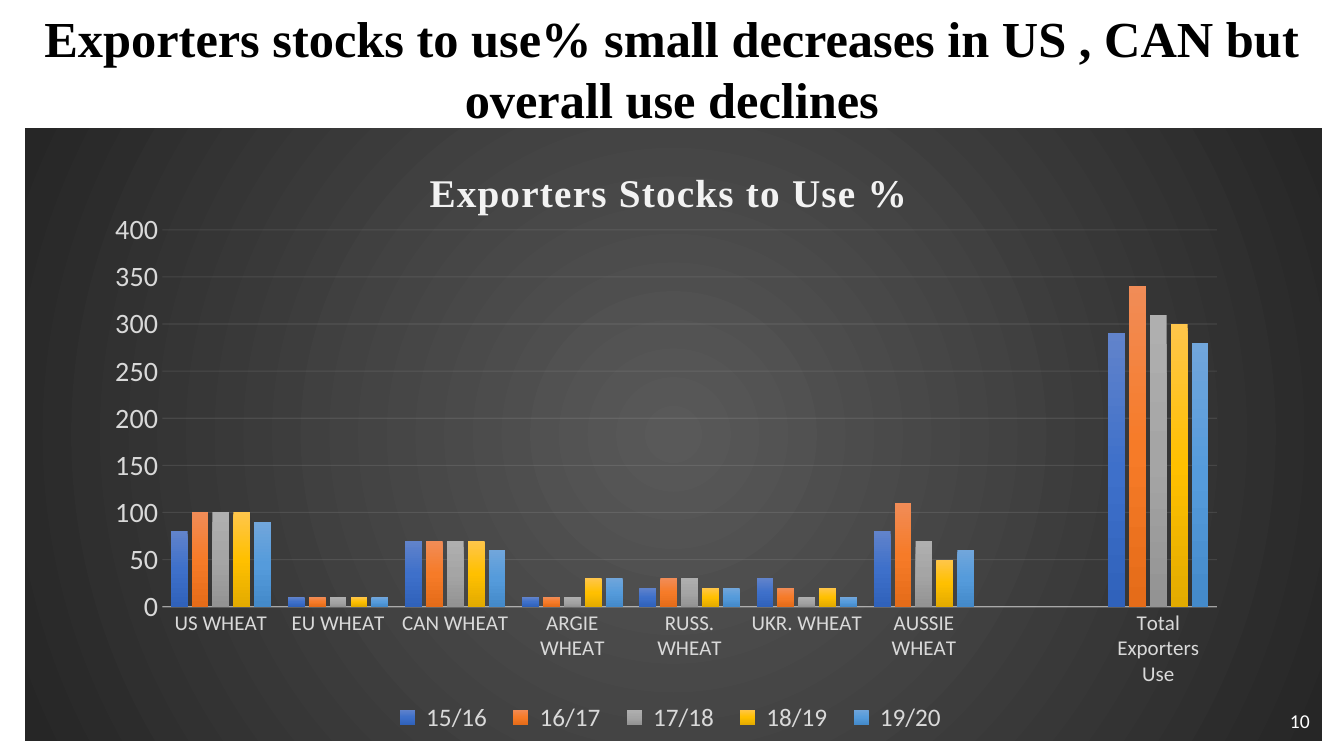
from lxml import etree
from pptx import Presentation
from pptx.chart.data import CategoryChartData
from pptx.dml.color import RGBColor
from pptx.enum.chart import XL_CHART_TYPE, XL_LEGEND_POSITION, XL_TICK_MARK
from pptx.enum.text import MSO_ANCHOR, PP_ALIGN
from pptx.oxml import parse_xml
from pptx.oxml.ns import qn
from pptx.util import Inches, Pt

COLUMN = XL_CHART_TYPE.COLUMN_CLUSTERED
BOTTOM = XL_LEGEND_POSITION.BOTTOM
NO_TICK = XL_TICK_MARK.NONE
MIDDLE = MSO_ANCHOR.MIDDLE
CENTER, RIGHT = PP_ALIGN.CENTER, PP_ALIGN.RIGHT

BLACK = RGBColor(0x00, 0x00, 0x00)
WHITE = RGBColor(0xFF, 0xFF, 0xFF)
PALE = RGBColor(0xF2, 0xF2, 0xF2)
LIGHT = RGBColor(0xD9, 0xD9, 0xD9)
GRAY = RGBColor(0x59, 0x59, 0x59)
DARK = RGBColor(0x26, 0x26, 0x26)
SANS, SERIF = "Calibri", "Times New Roman"
NS = ('xmlns:a="http://schemas.openxmlformats.org/drawingml/2006/main" '
      'xmlns:c="http://schemas.openxmlformats.org/drawingml/2006/chart"')
LINEAR = '<a:lin ang="5400000" scaled="0"/>'
CIRCLE = ('<a:path path="circle"><a:fillToRect l="50000" t="50000" '
          'r="50000" b="50000"/></a:path>')

GROUPS = ["US WHEAT", "EU WHEAT", "CAN WHEAT", "ARGIE WHEAT", "RUSS. WHEAT",
          "UKR. WHEAT", "AUSSIE WHEAT", "", "Total Exporters Use"]
YEARS = [
    (" 15/16", [80, 10, 70, 10, 20, 30, 80, None, 290], "6183CB 3E70CA 3062BB"),
    (" 16/17", [100, 10, 70, 10, 30, 20, 110, None, 340], "F18C57 F67B28 E56C19"),
    (" 17/18", [100, 10, 70, 10, 30, 10, 70, None, 310], "AFAFAF A5A5A5 939393"),
    (" 18/19", [100, 10, 70, 30, 20, 20, 50, None, 300], "FFC64B FFC000 E3AB00"),
    (" 19/20", [90, 10, 60, 30, 20, 10, 60, None, 280], "71A6DB 559BDB 448ACA"),
]


def style(font, size, color, face=SANS, bold=False):
    font.size, font.name, font.bold = Pt(size), face, bold
    font.color.rgb = color


def add_text(slide, text, box, size, color, face=SANS, bold=False,
             align=CENTER, anchor=MIDDLE):
    frame = slide.shapes.add_textbox(*map(Inches, box)).text_frame
    frame.word_wrap = True
    frame.vertical_anchor = anchor
    para = frame.paragraphs[0]
    para.alignment = align
    run = para.add_run()
    run.text = text
    style(run.font, size, color, face, bold)


def blend(colors, shade):
    step = 100000 // (len(colors) - 1)
    stops = "".join(f'<a:gs pos="{i * step}"><a:srgbClr val="{color}"/></a:gs>'
                    for i, color in enumerate(colors))
    return (f'<a:gradFill {NS} rotWithShape="1"><a:gsLst>{stops}</a:gsLst>'
            f'{shade}</a:gradFill>')


def set_layout(parent, box, spot, after=None, inner=False):
    wide, high = box[2:]
    marks = [("layoutTarget", "inner")] if inner else []
    marks += [("xMode", "edge"), ("yMode", "edge")]
    marks += [(tag, size / full) for tag, size, full
              in zip("xywh", spot, (wide, high, wide, high))]
    body = "".join(f'<c:{tag} val="{val}"/>' for tag, val in marks)
    place = parse_xml(f'<c:layout {NS}><c:manualLayout>{body}'
                      f'</c:manualLayout></c:layout>')
    for old in parent.findall(qn("c:layout")):
        parent.remove(old)
    if after is None:
        parent.insert(0, place)
    else:
        parent.find(qn(after)).addnext(place)


def set_line(line, width, alpha):
    line.color.rgb = PALE
    line.width = Pt(width)
    color = next(line._ln.iter(qn("a:srgbClr")))
    etree.SubElement(color, qn("a:alpha"), val=str(alpha * 1000))


def add_title(chart, box):
    chart.has_title = True
    title = chart.chart_title
    title.include_in_layout = False
    run = title.text_frame.paragraphs[0].add_run()
    run.text = "Exporters Stocks to Use %"
    style(run.font, 28, PALE, SERIF, True)
    run.font._element.set("spc", "100")
    set_layout(title._element, box, (3.94, 0.33), after="c:tx")


def add_legend(chart, box):
    chart.has_legend = True
    legend = chart.legend
    legend.position = BOTTOM
    legend.include_in_layout = False
    style(legend.font, 18, LIGHT)
    set_layout(legend._element, box, (3.54, 5.68, 5.72, 0.36),
               after="c:legendPos")


def set_axes(chart):
    for axis, size in ((chart.category_axis, 15), (chart.value_axis, 20)):
        axis.major_tick_mark = axis.minor_tick_mark = NO_TICK
        style(axis.tick_labels.font, size, LIGHT)
    set_line(chart.category_axis.format.line, 1, 54)
    scale = chart.value_axis
    scale.minimum_scale, scale.maximum_scale, scale.major_unit = 0, 400, 50
    scale.format.line.fill.background()
    scale.tick_labels.number_format = "0"
    scale.tick_labels.number_format_is_linked = False
    set_line(scale.major_gridlines.format.line, 0.75, 10)


def add_bars(slide, box):
    data = CategoryChartData(number_format="0")
    data.categories = GROUPS
    for name, vals, _ in YEARS:
        data.add_series(name, vals)
    chart = slide.shapes.add_chart(COLUMN, *map(Inches, box), data).chart
    style(chart.font, 10, BLACK)
    add_title(chart, box)
    set_axes(chart)
    add_legend(chart, box)
    plot = chart.plots[0]
    plot.gap_width, plot.overlap = 100, -24
    plot.vary_by_categories = False
    for bars, (_, _, tones) in zip(plot.series, YEARS):
        bars.format.fill.solid()
        fill = bars._element.spPr.find(qn("a:solidFill"))
        fill.getparent().replace(fill, parse_xml(blend(tones.split(), LINEAR)))
    root = chart._chartSpace
    set_layout(root.chart.plotArea, box, (1.36, 1.01, 10.46, 3.74), inner=True)
    back = blend([GRAY, DARK], CIRCLE)
    root.chart.addnext(parse_xml(
        f'<c:spPr {NS}>{back}<a:ln><a:noFill/></a:ln></c:spPr>'))


def build():
    deck = Presentation()
    deck.slide_width, deck.slide_height = Inches(13.33), Inches(7.5)
    slide = deck.slides.add_slide(deck.slide_layouts[6])
    add_bars(slide, (0.25, 1.27, 12.86, 6.08))
    add_text(slide, "10", (10.09, 6.95, 3, 0.4), 14, WHITE, align=RIGHT)
    add_text(slide, "Exporters stocks to use% small decreases in US , CAN but "
             "overall use declines", (0, 0.02, 13.33, 1.31), 36, BLACK,
             face=SERIF, bold=True)
    deck.save("out.pptx")


if __name__ == "__main__":
    build()
